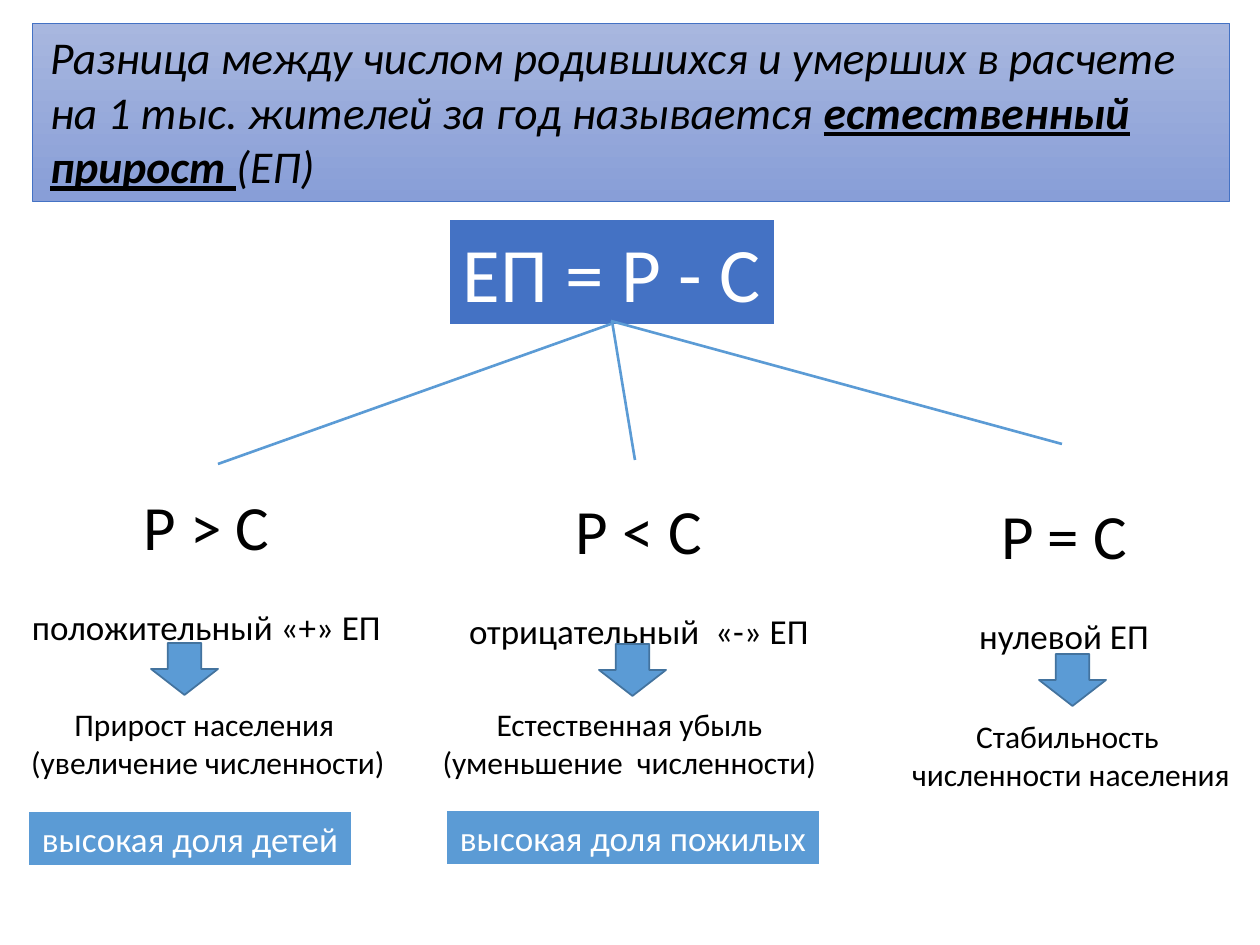
from lxml import etree
from pptx import Presentation
from pptx.dml.color import RGBColor
from pptx.enum.shapes import MSO_CONNECTOR, MSO_SHAPE
from pptx.enum.text import MSO_ANCHOR, MSO_AUTO_SIZE, PP_ALIGN
from pptx.oxml.ns import qn
from pptx.util import Emu, Pt

RECT, DOWN_ARROW = MSO_SHAPE.RECTANGLE, MSO_SHAPE.DOWN_ARROW
STRAIGHT = MSO_CONNECTOR.STRAIGHT
TOP = MSO_ANCHOR.TOP
GROW = MSO_AUTO_SIZE.SHAPE_TO_FIT_TEXT
LEFT, CENTER = PP_ALIGN.LEFT, PP_ALIGN.CENTER

THEME = {
    "font": "Calibri",
    "ink": "000000", "paper": "FFFFFF",
    "formula": "4472C4", "accent": "5B9BD5", "arrow_edge": "43739E",
    "gradient": ("A8B7DF", "889ED7"),
    "formula_size": 44, "condition_size": 36, "definition_size": 26,
    "label_size": 20, "result_size": 18,
}

DEFINITION = [
    ("Разница между числом родившихся и умерших в расчете "
     "на 1 тыс. жителей за год называется ", {}),
    ("естественный прирост", {"bold": True, "underline": True}),
    (" ", {"underline": True}),
    ("(ЕП)", {}),
]
DEFINITION_BOX = (32, 23, 1198, 178)
FORMULA = "ЕП = Р - С"
FORMULA_BOX = (449, 219, 326, 106)

# Boxes are (left, top, width, height) in px; branches are (from, to) points.
CASES = [
    {"branch": ((611, 324), (218, 464)),
     "condition": ("Р > С", "положительный «+» ЕП"), "condition_box": (0, 406, 413, 251),
     "arrow": (151, 643),
     "result": ("Прирост населения ", "(увеличение численности)"),
     "result_box": (0, 699, 416, 89),
     "share": "высокая доля детей", "share_box": (28, 811, 324, 55)},
    {"branch": ((612, 321), (635, 460)),
     "condition": ("Р ˂ С", "отрицательный  «-» ЕП"), "condition_box": (436, 410, 406, 251),
     "arrow": (599, 644),
     "result": ("Естественная убыль", "(уменьшение  численности)"),
     "result_box": (411, 699, 437, 89),
     "share": "высокая доля пожилых", "share_box": (446, 810, 374, 55)},
    {"branch": ((611, 321), (1062, 444)),
     "condition": ("Р = С", "нулевой ЕП"), "condition_box": (955, 415, 218, 251),
     "arrow": (1039, 654),
     "result": ("Стабильность ", "численности населения"),
     "result_box": (882, 711, 378, 89)},
]
ARROW_SIZE = (67, 52)


def px(*lengths):
    return [Emu(round(length * 914400 / 126)) for length in lengths]


def rgb(name):
    return RGBColor.from_string(THEME.get(name, name))


def write(frame, paragraphs, color="ink", align=CENTER, spacing=None, wrap=False, italic=None):
    """Fill a frame from (runs, size) paragraphs; runs are (text, font flags)."""
    frame.word_wrap = wrap
    frame.auto_size = GROW
    frame.vertical_anchor = TOP
    for index, (runs, size) in enumerate(paragraphs):
        paragraph = frame.add_paragraph() if index else frame.paragraphs[0]
        paragraph.alignment = align
        if spacing:
            paragraph.line_spacing = spacing
        for text, flags in runs:
            run = paragraph.add_run()
            run.text = text
            font = run.font
            font.name, font.size = THEME["font"], Pt(THEME[size])
            font.color.rgb = rgb(color)
            font.italic = italic
            font.bold = flags.get("bold", False)
            font.underline = flags.get("underline", False)


def plain(lines, sizes):
    return [([(line, {})], size) for line, size in zip(lines, sizes)]


def add_block(slide, kind, box, fill, edge, width):
    block = slide.shapes.add_shape(kind, *px(*box))
    block.shadow.inherit = False
    block.fill.solid()
    block.fill.fore_color.rgb = rgb(fill)
    block.line.color.rgb = rgb(edge)
    block.line.width = Pt(width)
    return block


def add_plate(slide, text, box, fill, size):
    """Add a filled box with one line of white text."""
    plate = add_block(slide, RECT, box, fill, "paper", 1.5)
    write(plate.text_frame, plain([text], [size]), color="paper")


def add_text(slide, lines, sizes, box, spacing=None):
    textbox = slide.shapes.add_textbox(*px(*box))
    write(textbox.text_frame, plain(lines, sizes), spacing=spacing)


def add_branch(slide, start, end):
    branch = slide.shapes.add_connector(STRAIGHT, *px(*start, *end))
    branch.line.color.rgb = rgb("accent")
    branch.line.width = Pt(1.5)
    etree.SubElement(branch._element.spPr, qn("a:effectLst"))


def format_definition(title):
    title.left, title.top, title.width, title.height = px(*DEFINITION_BOX)
    title.fill.gradient()
    title.fill.gradient_angle = 270
    for stop, color in zip(title.fill.gradient_stops, THEME["gradient"]):
        stop.color.rgb = rgb(color)
    title.line.color.rgb = rgb("formula")
    title.line.width = Pt(0.5)
    title.text_frame.margin_left = px(18)[0]
    write(title.text_frame, [(DEFINITION, "definition_size")],
          align=LEFT, wrap=True, italic=True)


def main():
    deck = Presentation()
    deck.slide_width, deck.slide_height = px(1260, 945)
    slide = deck.slides.add_slide(deck.slide_layouts[5])

    format_definition(slide.shapes.title)
    add_plate(slide, FORMULA, FORMULA_BOX, "formula", "formula_size")
    for case in CASES:
        add_branch(slide, *case["branch"])
        add_text(slide, case["condition"], ("condition_size", "label_size"),
                 case["condition_box"], spacing=2.0)
        add_text(slide, case["result"], ("result_size", "result_size"), case["result_box"])
        if "share" in case:
            add_plate(slide, case["share"], case["share_box"], "accent", "label_size")
        add_block(slide, DOWN_ARROW, case["arrow"] + ARROW_SIZE, "accent", "arrow_edge", 1)

    deck.save("out.pptx")


if __name__ == "__main__":
    main()
